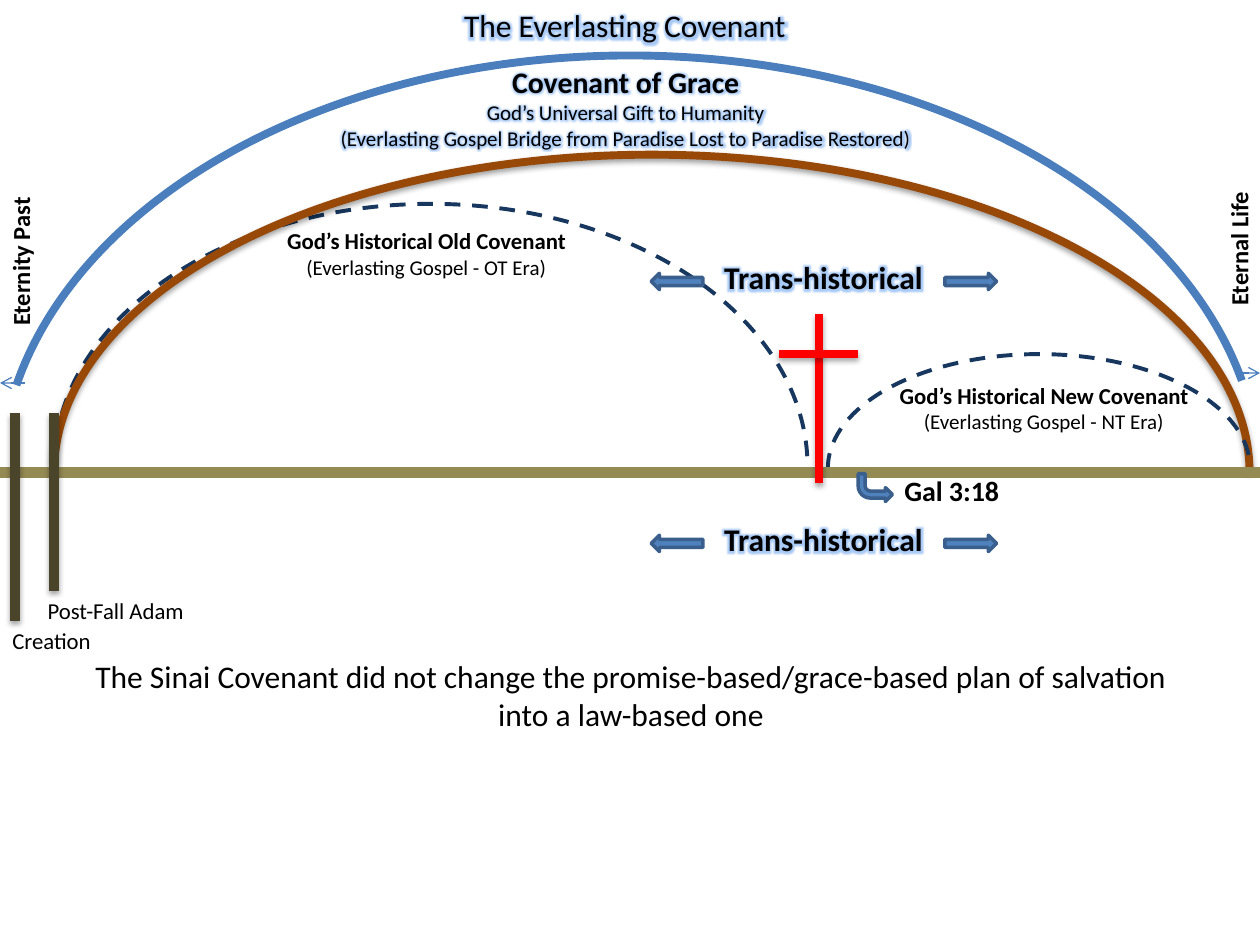
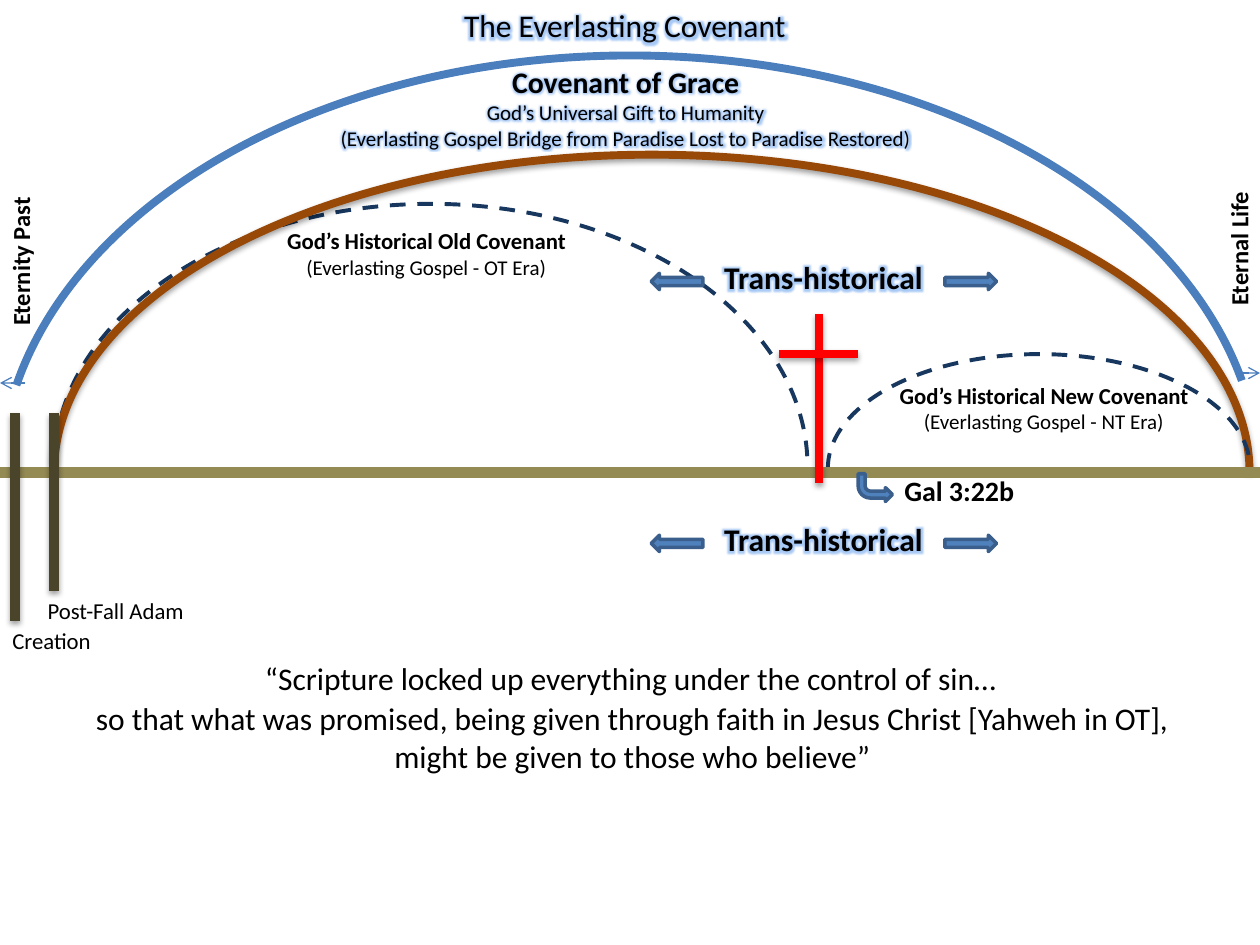
from typing import NamedTuple, Optional

from lxml import etree
from pptx import Presentation
from pptx.dml.color import RGBColor
from pptx.enum import dml, shapes, text
from pptx.oxml.ns import qn
from pptx.util import Cm, Pt

FONT = "Calibri"
BLACK = RGBColor(0x00, 0x00, 0x00)
NAVY = RGBColor(0x17, 0x37, 0x5E)
BROWN = RGBColor(0x98, 0x48, 0x07)
OLIVE = RGBColor(0x94, 0x8A, 0x54)
DARK_OLIVE = RGBColor(0x4A, 0x45, 0x2A)
SKY = RGBColor(0x4B, 0x7E, 0xBC)
ARROW_FILL = RGBColor(0x4F, 0x81, 0xBD)
ARROW_EDGE = RGBColor(0x3A, 0x5F, 0x8C)
RED = RGBColor(0xFF, 0x00, 0x00)
GLOW = RGBColor(0x26, 0x79, 0xE6)

LEFT = text.PP_ALIGN.LEFT
CENTER = text.PP_ALIGN.CENTER


class Box(NamedTuple):
    left: float
    top: float
    width: float
    height: float


class Shadow(NamedTuple):
    opacity: int
    distance: float


ARC_SHADOW = Shadow(38, 1.6)
LINE_SHADOW = Shadow(35, 1.8)


class Arc(NamedTuple):
    box: Box
    start: float
    end: float
    color: RGBColor
    weight: float
    dashed: bool = False
    shadow: Optional[Shadow] = None


class Stroke(NamedTuple):
    x1: float
    y1: float
    x2: float
    y2: float
    color: RGBColor
    weight: float
    arrow: bool = False
    shadow: Optional[Shadow] = None


class Line(NamedTuple):
    words: str
    size: float
    bold: bool = False


class Label(NamedTuple):
    box: Box
    lines: tuple[Line, ...]
    align: text.PP_ALIGN = CENTER
    rotation: float = 0
    glow: float = 0


class Pointer(NamedTuple):
    box: Box
    kind: shapes.MSO_SHAPE = shapes.MSO_SHAPE.RIGHT_ARROW
    flipped: bool = False
    rotation: float = 0


class Verse(NamedTuple):
    reference: str
    captions: tuple[Label, ...]


ARCS = (
    Arc(Box(1.09, 4.11, 15.19, 10.59), 179.84, 0, NAVY, 2.25, dashed=True),
    Arc(Box(1.09, 3.12, 24.1, 12.8), 180.88, 359.89, BROWN, 4.5, shadow=ARC_SHADOW),
    Arc(Box(16.69, 7.14, 8.51, 4.6), 179.84, 358.96, NAVY, 2.25, dashed=True),
    Arc(Box(0, 1.12, 25.4, 17.2), 188.98, 350.58, SKY, 4.5),
)

STROKES = (
    Stroke(0, 9.53, 25.4, 9.53, OLIVE, 6),
    Stroke(0.51, 7.72, 0, 7.72, SKY, 0.75, arrow=True),
    Stroke(24.89, 7.52, 25.4, 7.52, SKY, 0.75, arrow=True),
    Stroke(1.09, 8.33, 1.09, 11.91, DARK_OLIVE, 6, shadow=LINE_SHADOW),
    Stroke(0.3, 8.33, 0.3, 12.52, DARK_OLIVE, 6, shadow=LINE_SHADOW),
    Stroke(16.51, 9.73, 16.51, 6.32, RED, 4.5, shadow=LINE_SHADOW),
    Stroke(15.7, 7.14, 17.3, 7.14, RED, 4.5, shadow=LINE_SHADOW),
)

TITLE = Label(Box(8.1, 0, 8.99, 1.73), (Line("The Everlasting Covenant", 18),), glow=5)

LABELS = (
    Label(Box(4.9, 4.45, 7.39, 1.32), (
        Line("God’s Historical Old Covenant", 13, True),
        Line("(Everlasting Gospel - OT Era)", 12))),
    Label(Box(16.69, 7.57, 8.71, 1.32), (
        Line("God’s Historical New Covenant", 13, True),
        Line("(Everlasting Gospel - NT Era)", 12))),
    Label(Box(0, 12.52, 3.3, 0.81), (Line("Creation", 13),), LEFT),
    Label(Box(0.71, 11.91, 5, 0.81), (Line("Post-Fall Adam", 13),), LEFT),
    Label(Box(-1.83, 4.14, 4.5, 0.86), (Line("Eternity Past", 14, True),), LEFT, 270),
    Label(Box(22.73, 3.73, 4.5, 0.86), (Line("Eternal Life", 14, True),), LEFT, 270),
    Label(Box(5.11, 1.17, 15.01, 2.01), (
        Line("Covenant of Grace", 17, True),
        Line("God’s Universal Gift to Humanity", 12),
        Line("(Everlasting Gospel Bridge from Paradise Lost to Paradise Restored)", 12)),
        glow=5),
)

TRANS_HISTORICAL_TOPS = (5.08, 10.36)
VERSE_POINTER = Pointer(Box(17.3, 9.55, 0.69, 0.56), shapes.MSO_SHAPE.BENT_ARROW, True, 180)
VERSE_BOX = Box(17.98, 9.42, 4.65, 0.94)

VERSES = (
    Verse("Gal 3:18", (
        Label(Box(0.3, 13.13, 24.84, 2.57), (
            Line("The Sinai Covenant did not change the promise-based/grace-based "
                 "plan of salvation", 18),
            Line("into a law-based one", 18))),)),
    Verse("Gal 3:22b", (
        Label(Box(0.33, 13.97, 24.84, 1.8), (
            Line("so that what was promised, being given through faith in "
                 "Jesus Christ [Yahweh in OT],", 18),
            Line("might be given to those who believe”", 18))),
        Label(Box(0.3, 13.16, 24.84, 1.02), (
            Line("“Scripture locked up everything under the control of sin…", 18),)))),
)


def lengths(box: Box) -> tuple[Cm, ...]:
    return tuple(Cm(value) for value in box)


def add_color(parent, color: RGBColor, opacity: int) -> None:
    tint = etree.SubElement(parent, qn("a:srgbClr"), val=str(color))
    etree.SubElement(tint, qn("a:alpha"), val=str(opacity * 1000))


def set_shadow(properties, shadow: Optional[Shadow]) -> None:
    effects = properties.find(qn("a:effectLst"))
    if effects is None:
        effects = etree.SubElement(properties, qn("a:effectLst"))
    if shadow:
        cast = etree.SubElement(
            effects, qn("a:outerShdw"), blurRad=str(Pt(3.1)),
            dist=str(Pt(shadow.distance)), dir="5400000", rotWithShape="0")
        add_color(cast, BLACK, shadow.opacity)


def set_glow(run, radius: float) -> None:
    effects = etree.Element(qn("a:effectLst"))
    halo = etree.SubElement(effects, qn("a:glow"), rad=str(Pt(radius)))
    add_color(halo, GLOW, 40)
    run.font._element.find(qn("a:solidFill")).addnext(effects)


def set_line(line, color: RGBColor, weight: float) -> None:
    line.color.rgb = color
    line.width = Pt(weight)


def draw_arc(slide, arc: Arc) -> None:
    curve = slide.shapes.add_shape(shapes.MSO_SHAPE.ARC, *lengths(arc.box))
    for index, degrees in enumerate((arc.start, arc.end)):
        curve.adjustments[index] = degrees * 0.6
    curve.fill.background()
    set_line(curve.line, arc.color, arc.weight)
    if arc.dashed:
        curve.line.dash_style = dml.MSO_LINE.DASH
    curve.shadow.inherit = False
    set_shadow(curve._element.spPr, arc.shadow)


def draw_stroke(slide, stroke: Stroke) -> None:
    ends = (Cm(value) for value in stroke[:4])
    rule = slide.shapes.add_connector(shapes.MSO_CONNECTOR.STRAIGHT, *ends)
    set_line(rule.line, stroke.color, stroke.weight)
    properties = rule._element.spPr
    if stroke.arrow:
        etree.SubElement(properties.find(qn("a:ln")), qn("a:tailEnd"), type="arrow")
    set_shadow(properties, stroke.shadow)


def draw_pointer(slide, pointer: Pointer) -> None:
    arrow = slide.shapes.add_shape(pointer.kind, *lengths(pointer.box))
    arrow.rotation = pointer.rotation
    if pointer.flipped:
        arrow._element.spPr.find(qn("a:xfrm")).set("flipH", "1")
    arrow.fill.solid()
    arrow.fill.fore_color.rgb = ARROW_FILL
    set_line(arrow.line, ARROW_EDGE, 2)
    arrow.shadow.inherit = False


def write_label(holder, label: Label) -> None:
    holder.left, holder.top, holder.width, holder.height = lengths(label.box)
    holder.rotation = label.rotation
    frame = holder.text_frame
    frame.word_wrap = True
    frame.auto_size = text.MSO_AUTO_SIZE.NONE
    frame.vertical_anchor = text.MSO_ANCHOR.TOP
    frame.text = "\n".join(line.words for line in label.lines)
    for paragraph, line in zip(frame.paragraphs, label.lines):
        paragraph.alignment = label.align
        for run in paragraph.runs:
            run.font.name = FONT
            run.font.size = Pt(line.size)
            run.font.bold = line.bold
            run.font.color.rgb = BLACK
            if label.glow:
                set_glow(run, label.glow)


def draw_label(slide, label: Label) -> None:
    write_label(slide.shapes.add_textbox(*lengths(label.box)), label)


def draw_trans_historical(slide, top: float) -> None:
    draw_label(slide, Label(Box(13.64, top, 5.92, 1.02),
                            (Line("Trans-historical", 18, True),), glow=8))
    for left, flipped in ((13.13, True), (19.05, False)):
        draw_pointer(slide, Pointer(Box(left, top + 0.43, 1.04, 0.33), flipped=flipped))


def build_slide(deck, verse: Verse) -> None:
    slide = deck.slides.add_slide(deck.slide_layouts.get_by_name("Title Only"))
    write_label(slide.shapes.title, TITLE)
    for arc in ARCS:
        draw_arc(slide, arc)
    for stroke in STROKES:
        draw_stroke(slide, stroke)
    for label in LABELS:
        draw_label(slide, label)
    for top in TRANS_HISTORICAL_TOPS:
        draw_trans_historical(slide, top)
    draw_pointer(slide, VERSE_POINTER)
    draw_label(slide, Label(VERSE_BOX, (Line(verse.reference, 16, True),), LEFT))
    for caption in verse.captions:
        draw_label(slide, caption)


def main() -> None:
    deck = Presentation()
    deck.slide_width, deck.slide_height = Cm(25.4), Cm(19.05)
    for verse in VERSES:
        build_slide(deck, verse)
    deck.save("out.pptx")


if __name__ == "__main__":
    main()
